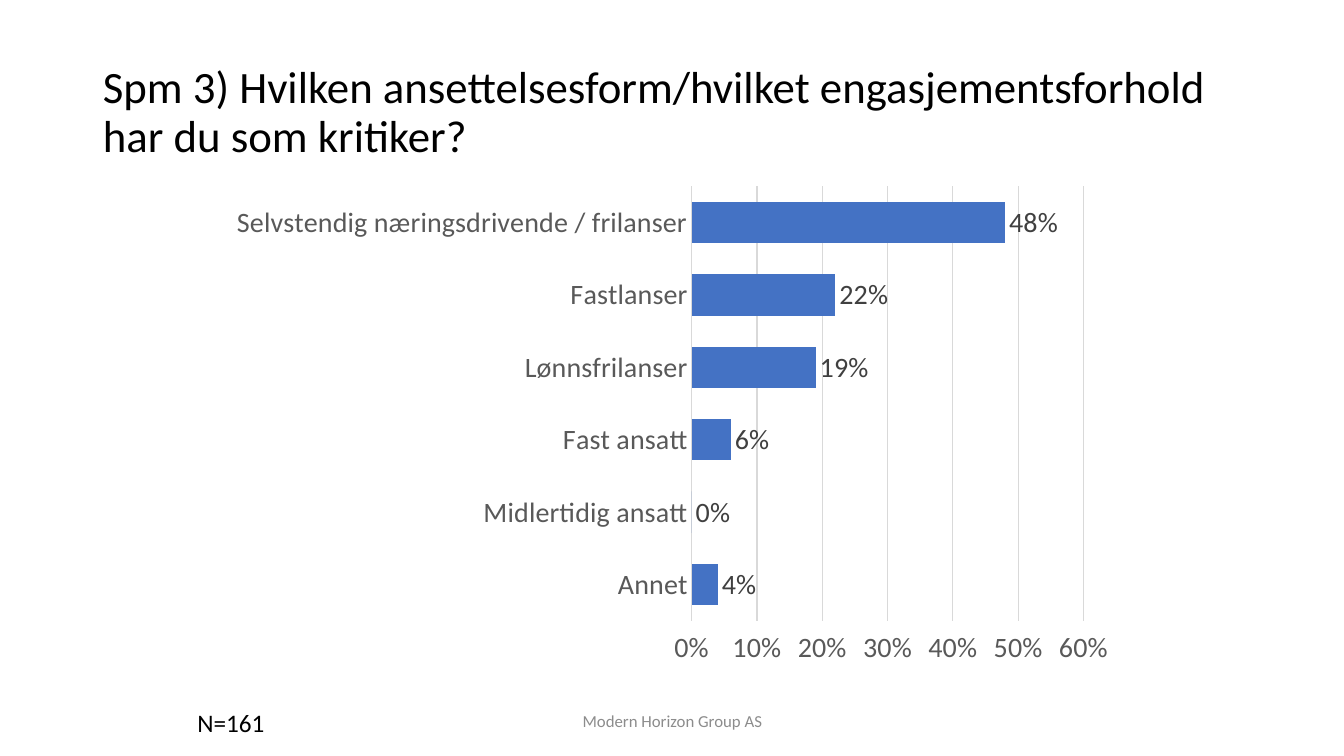
from pptx import Presentation
from pptx.chart.data import CategoryChartData
from pptx.dml.color import RGBColor
from pptx.enum.chart import XL_CHART_TYPE, XL_LABEL_POSITION, XL_TICK_LABEL_POSITION, XL_TICK_MARK
from pptx.enum.text import MSO_ANCHOR, MSO_AUTO_SIZE, PP_ALIGN
from pptx.util import Inches, Pt

BAR_CLUSTERED = XL_CHART_TYPE.BAR_CLUSTERED
LABELS_HIGH = XL_TICK_LABEL_POSITION.HIGH
NO_TICKS = XL_TICK_MARK.NONE
OUTSIDE_END = XL_LABEL_POSITION.OUTSIDE_END
LEFT, CENTER = PP_ALIGN.LEFT, PP_ALIGN.CENTER
TOP, MIDDLE = MSO_ANCHOR.TOP, MSO_ANCHOR.MIDDLE
NO_AUTOFIT = MSO_AUTO_SIZE.NONE

BLACK = RGBColor(0x00, 0x00, 0x00)
AXIS_GRAY = RGBColor(0x59, 0x59, 0x59)
LABEL_GRAY = RGBColor(0x40, 0x40, 0x40)
FOOTER_GRAY = RGBColor(0x8C, 0x8C, 0x8C)
GRID_GRAY = RGBColor(0xD9, 0xD9, 0xD9)
BAR_BLUE = RGBColor(0x44, 0x72, 0xC4)

EMPLOYMENT_SHARES = {
    "Selvstendig næringsdrivende / frilanser": 0.48,
    "Fastlanser": 0.22,
    "Lønnsfrilanser": 0.19,
    "Fast ansatt": 0.06,
    "Midlertidig ansatt": 0,
    "Annet": 0.04,
}


def set_font(font, size, color, name="Calibri"):
    font.name = name
    font.size = Pt(size)
    font.color.rgb = color


def write_text(text_frame, text, size=18, color=BLACK, align=LEFT,
               anchor=TOP, wrap=True, line_spacing=None):
    text_frame.auto_size = NO_AUTOFIT
    text_frame.word_wrap = wrap
    text_frame.vertical_anchor = anchor
    paragraph = text_frame.paragraphs[0]
    paragraph.alignment = align
    paragraph.line_spacing = line_spacing
    run = paragraph.add_run()
    run.text = text
    set_font(run.font, size, color)


class SurveySlide:
    chart_size = 20

    def __init__(self, presentation):
        self.slide = presentation.slides.add_slide(presentation.slide_layouts[5])

    def title(self, text, left, top, width, height):
        shape = self.slide.shapes.title
        shape.left, shape.top = Inches(left), Inches(top)
        shape.width, shape.height = Inches(width), Inches(height)
        write_text(shape.text_frame, text, size=32, anchor=MIDDLE, line_spacing=0.9)

    def text_box(self, text, left, top, width, height, **text_format):
        shape = self.slide.shapes.add_textbox(
            Inches(left), Inches(top), Inches(width), Inches(height))
        write_text(shape.text_frame, text, **text_format)

    def bar_chart(self, shares, left, top, width, height):
        chart_data = CategoryChartData(number_format="0%")
        chart_data.categories = list(shares)
        chart_data.add_series("Series 1", list(shares.values()))
        chart = self.slide.shapes.add_chart(
            BAR_CLUSTERED, Inches(left), Inches(top),
            Inches(width), Inches(height), chart_data).chart
        chart.has_legend = False
        chart.has_title = False
        set_font(chart.font, self.chart_size, BLACK)
        self.style_axes(chart)
        self.style_bars(chart.plots[0])

    def style_axes(self, chart):
        category_axis, value_axis = chart.category_axis, chart.value_axis
        for axis in (category_axis, value_axis):
            axis.major_tick_mark = NO_TICKS
            axis.minor_tick_mark = NO_TICKS
            set_font(axis.tick_labels.font, self.chart_size, AXIS_GRAY)

        # First category on top, percentages at the bottom
        category_axis.reverse_order = True
        value_axis.tick_label_position = LABELS_HIGH
        value_axis.minimum_scale = 0
        value_axis.maximum_scale = 0.6
        value_axis.major_unit = 0.1
        value_axis.tick_labels.number_format = "0%"
        value_axis.tick_labels.number_format_is_linked = False

        value_axis.format.line.fill.background()
        value_axis.has_major_gridlines = True
        for line in (category_axis.format.line, value_axis.major_gridlines.format.line):
            line.color.rgb = GRID_GRAY
            line.width = Pt(0.75)

    def style_bars(self, plot):
        plot.gap_width = 75
        plot.vary_by_categories = False
        fill = plot.series[0].format.fill
        fill.solid()
        fill.fore_color.rgb = BAR_BLUE
        plot.has_data_labels = True
        labels = plot.data_labels
        labels.show_value = True
        labels.number_format = "0%"
        labels.number_format_is_linked = False
        labels.position = OUTSIDE_END
        set_font(labels.font, self.chart_size, LABEL_GRAY)


def main():
    presentation = Presentation()
    presentation.slide_width = Inches(13.33)
    presentation.slide_height = Inches(7.5)
    survey = SurveySlide(presentation)

    # Question
    survey.title("Spm 3) Hvilken ansettelsesform/hvilket engasjementsforhold "
                 "har du som kritiker?", 0.92, 0.4, 11.5, 1.45)

    # Answers
    survey.bar_chart(EMPLOYMENT_SHARES, 2.17, 1.75, 9, 4.95)

    # Footer and sample size
    survey.text_box("Modern Horizon Group AS", 4.42, 6.95, 4.5, 0.4, size=12,
                    color=FOOTER_GRAY, align=CENTER, anchor=MIDDLE)
    survey.text_box("N=161", 1.86, 6.97, 0.87, 0.4, wrap=False)

    presentation.save("out.pptx")


if __name__ == "__main__":
    main()
